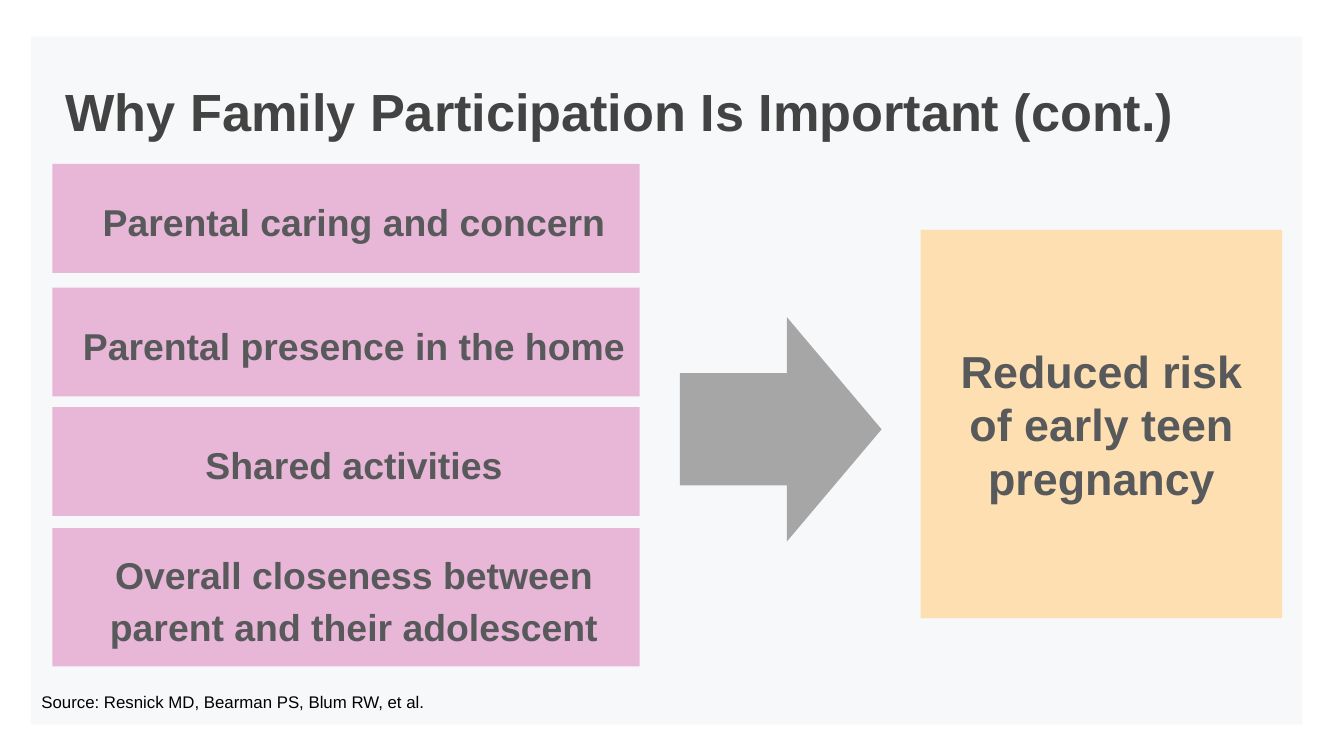
"""Build the slide on family participation and teen pregnancy risk."""
from pptx import Presentation
from pptx import util as u
from pptx.dml.color import RGBColor
from pptx.enum import shapes, text
from lxml import etree

PX = 9144
SIZE = (1000, 562.5)
INK = {"panel": "073763", "arrow": "A6A6A6", "factor": "E8B6D7",
       "result": "FEDFB2", "title": "434343", "label": "58595B",
       "source": "000000"}
KIND = shapes.MSO_SHAPE
TOP, MID = text.MSO_ANCHOR.TOP, text.MSO_ANCHOR.MIDDLE
LEFT, CENTER = text.PP_ALIGN.LEFT, text.PP_ALIGN.CENTER

TITLE = "Why Family Participation Is Important (cont.)"
FACTORS = [
    ("Parental caring and concern", 122, 81),
    ("Parental presence in the home", 214, 81),
    ("Shared activities", 303, 81),
    ("Overall closeness between parent and their adolescent", 393, 103),
]
RESULT = "Reduced risk of early teen pregnancy"
SOURCE = "Source: Resnick MD, Bearman PS, Blum RW, et al."

STYLES = {
    "title": dict(size=28, bold=True, align=LEFT, anchor=TOP),
    "factor": dict(size=20, bold=True, align=CENTER, anchor=MID,
                   gap=1.15, margin=12),
    "result": dict(size=24, bold=True, align=CENTER, anchor=MID),
    "source": dict(size=9, bold=False, align=LEFT, anchor=TOP),
}


def scale(box):
    return [u.Emu(int(n * PX)) for n in box]


def color(name):
    return RGBColor.from_string(INK[name])


def draw(slide, kind, box, ink):
    shape = slide.shapes.add_shape(kind, *scale(box))
    shape.shadow.inherit = False
    shape.fill.solid()
    shape.fill.fore_color.rgb = color(ink)
    shape.line.fill.background()
    return shape


def write(shape, words, style, ink):
    form = STYLES[style]
    frame = shape.text_frame
    frame.word_wrap = True
    frame.vertical_anchor = form["anchor"]
    for side in ("left", "top", "right", "bottom"):
        setattr(frame, f"margin_{side}", u.Inches(0.1))
    para = frame.paragraphs[0]
    para.alignment = form["align"]
    para.line_spacing = form.get("gap", 1.0)
    if "margin" in form:
        para._p.get_or_add_pPr().set("marL", str(form["margin"] * PX))
    run = para.add_run()
    run.text = words
    font = {"name": "Arial", "size": u.Pt(form["size"]), "bold": form["bold"]}
    for key, value in font.items():
        setattr(run.font, key, value)
    run.font.color.rgb = color(ink)


def main():
    deck = Presentation()
    deck.slide_width, deck.slide_height = scale(SIZE)
    slide = deck.slides.add_slide(deck.slide_layouts[6])

    panel = draw(slide, KIND.RECTANGLE, (23, 27, 946, 512), "panel")
    tint = panel.fill._xPr.solidFill[0]
    space = etree.QName(tint).namespace
    etree.SubElement(tint, f"{{{space}}}alpha", val="3000")

    arrow = draw(slide, KIND.RIGHT_ARROW, (506, 236, 150, 167), "arrow")
    arrow.adjustments[0] = 0.5
    arrow.adjustments[1] = 0.47

    head = slide.shapes.add_textbox(*scale((39, 49, 932, 63)))
    write(head, TITLE, "title", "title")
    for words, top, high in FACTORS:
        card = draw(slide, KIND.RECTANGLE, (39, top, 437, high), "factor")
        write(card, words, "factor", "label")
    card = draw(slide, KIND.RECTANGLE, (685, 171, 269, 289), "result")
    write(card, RESULT, "result", "label")
    foot = slide.shapes.add_textbox(*scale((21, 507, 768, 37)))
    write(foot, SOURCE, "source", "source")

    deck.save("out.pptx")


if __name__ == "__main__":
    main()
